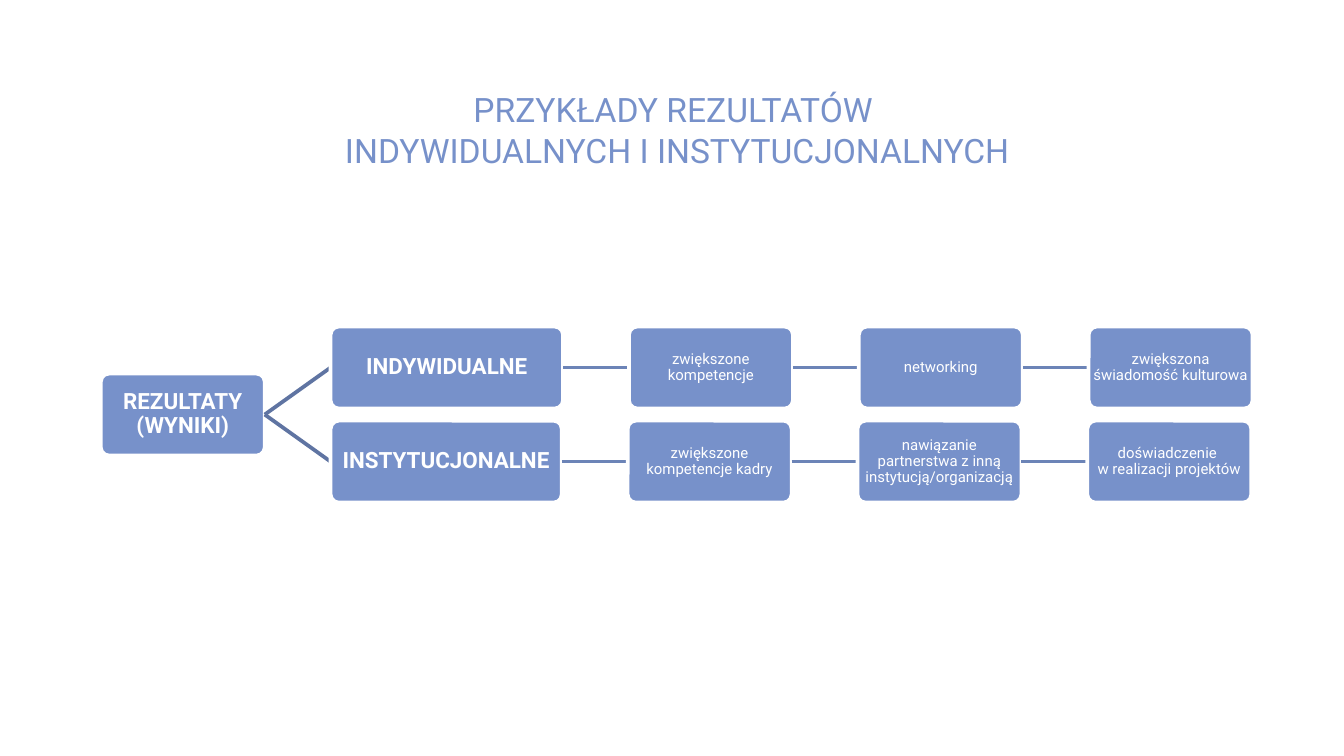
from lxml import etree
from pptx import Presentation
from pptx import util as u
from pptx.dml.color import RGBColor
from pptx.enum import shapes, text
from pptx.oxml import ns

BLUE = RGBColor(0x77, 0x91, 0xCA)
FORK = RGBColor(0x5F, 0x74, 0xA2)
LINK = RGBColor(0x6C, 0x84, 0xB7)
WHITE = RGBColor(0xFF, 0xFF, 0xFF)
FONT = "Roboto"

WIDE = u.Inches(10)
HIGH = WIDE * 9 // 16
LEFT, GAP = 0.75, 0.49
BOX_W, BOX_H = 1.22, 0.61
TOP, STEP = 2.43, 0.7

TITLE = "PRZYKŁADY REZULTATÓW \nINDYWIDUALNYCH I INSTYTUCJONALNYCH"
ROOT = "REZULTATY (WYNIKI)"
# Width of the heading box, heading, results
ROWS = [
    (1.73, "INDYWIDUALNE",
     ["zwiększone kompetencje", "networking", "zwiększona świadomość kulturowa"]),
    (1.72, "INSTYTUCJONALNE",
     ["zwiększone kompetencje kadry",
      "nawiązanie partnerstwa z inną instytucją/organizacją",
      "doświadczenie \nw realizacji projektów"]),
]


def style(para, words, size, color, bold=False):
    para.text = words
    para.alignment = text.PP_ALIGN.CENTER
    font = para.font
    font.name, font.size, font.bold = FONT, u.Pt(size), bold
    font.color.rgb = color


def add_title(slide):
    title = slide.shapes.title
    title.left, title.top = u.Inches(LEFT), u.Inches(0.77)
    title.width, title.height = u.Inches(8.58), u.Inches(0.71)
    frame = title.text_frame
    frame.word_wrap = True
    frame.auto_size = text.MSO_AUTO_SIZE.NONE
    frame.vertical_anchor = text.MSO_ANCHOR.MIDDLE
    frame.margin_bottom = u.Inches(0.37)
    style(frame.paragraphs[0], TITLE, 18, BLUE)


def add_box(slide, x, row, width, words, head=False):
    box = slide.shapes.add_shape(
        shapes.MSO_SHAPE.ROUNDED_RECTANGLE,
        u.Inches(x), u.Inches(TOP + row * STEP), u.Inches(width), u.Inches(BOX_H))
    box.adjustments[0] = 0.1
    box.shadow.inherit = False
    box.fill.solid()
    box.fill.fore_color.rgb = BLUE
    box.line.color.rgb = WHITE
    box.line.width = u.Pt(2)
    frame = box.text_frame
    frame.word_wrap = True
    frame.vertical_anchor = text.MSO_ANCHOR.MIDDLE
    frame.margin_left = frame.margin_right = u.Inches(0.01)
    frame.margin_top = frame.margin_bottom = u.Inches(0.01)
    para = frame.paragraphs[0]
    style(para, words, 12 if head else 8, WHITE, head)
    para.line_spacing = 0.9


def add_link(slide, x, start, end, color):
    """Bridge the gap right of x, from the middle of row start to that of row end."""
    mid = TOP + BOX_H / 2
    line = slide.shapes.add_connector(
        shapes.MSO_CONNECTOR.STRAIGHT,
        u.Inches(x), u.Inches(mid + start * STEP),
        u.Inches(x + GAP), u.Inches(mid + end * STEP))
    line.line.color.rgb = color
    line.line.width = u.Pt(2)
    props = line._element.spPr
    etree.SubElement(props, ns.qn("a:effectLst"))


def add_row(slide, row, width, head, results):
    x = LEFT + BOX_W
    add_link(slide, x, 0.5, row, FORK)
    x += GAP
    add_box(slide, x, row, width, head, True)
    x += width
    for words in results:
        add_link(slide, x, row, row, LINK)
        add_box(slide, x + GAP, row, BOX_W, words)
        x += GAP + BOX_W


def main():
    deck = Presentation()
    deck.slide_width, deck.slide_height = WIDE, HIGH
    slide = deck.slides.add_slide(deck.slide_layouts[5])
    add_title(slide)
    add_box(slide, LEFT, 0.5, BOX_W, ROOT, True)
    for row, (width, head, results) in enumerate(ROWS):
        add_row(slide, row, width, head, results)
    deck.save("out.pptx")


if __name__ == "__main__":
    main()
